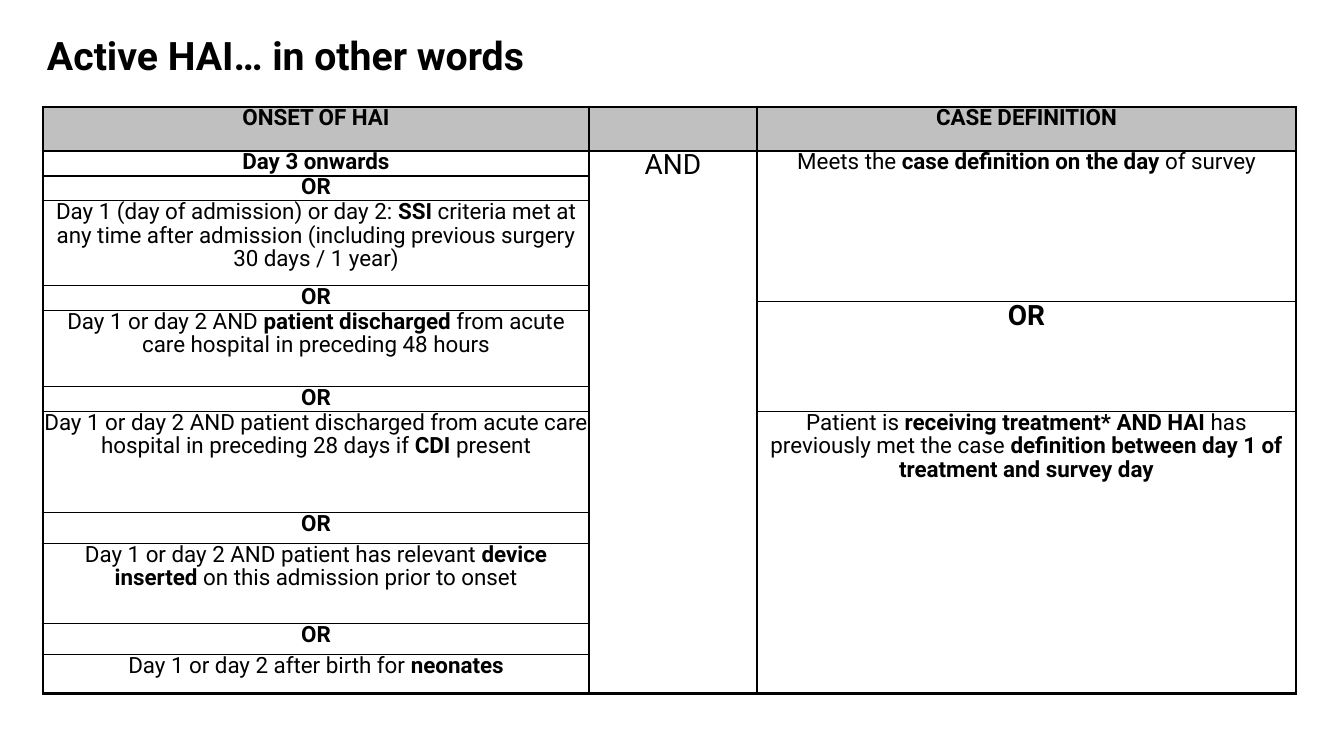
import pptx
import pptx.util
import pptx.dml.color
import pptx.enum.text
import pptx.oxml.ns
import lxml.etree

THEME = {
    "font": "Roboto", "ink": "000000", "header": "C0C0C0", "paper": "FFFFFF",
    "title": 28, "large": 20, "body": 16, "filler": 1,
    "outer": 2.25, "inner": 1,
}
SCALE = 914400 / 100.8


def px(n):
    return pptx.util.Emu(round(n * SCALE))


def add_runs(p, text, size):
    p.line_spacing = 0.9
    for i, part in enumerate(text.split("|")):
        if part:
            r = p.add_run()
            r.text = part
            r.font.name = THEME["font"]
            r.font.size = pptx.util.Pt(size)
            r.font.bold = i % 2 == 1
            r.font.color.rgb = pptx.dml.color.RGBColor.from_string(THEME["ink"])


prs = pptx.Presentation()
prs.slide_width, prs.slide_height = px(1344), px(756)
s = prs.slides.add_slide(prs.slide_layouts[5])

title = s.shapes.title
title.left, title.top, title.width, title.height = px(47), px(37), px(1137), px(88)
tf = title.text_frame
tf.margin_left = tf.margin_top = tf.margin_right = tf.margin_bottom = 0
tf.word_wrap = True
tf.auto_size = pptx.enum.text.MSO_AUTO_SIZE.NONE
tf.vertical_anchor = pptx.enum.text.MSO_ANCHOR.TOP
p = tf.paragraphs[0]
p.alignment = pptx.enum.text.PP_ALIGN.LEFT
add_runs(p, "|Active HAI… in other words|", THEME["title"])

widths = [546, 168, 539]
heights = [44, 25, 25, 85, 16, 9, 76, 25, 101, 31, 80, 31, 39]
entries = [
    (0, 0, 1, "body", "|ONSET OF HAI|"),
    (0, 1, 1, "body", ""),
    (0, 2, 1, "body", "|CASE DEFINITION|"),
    (1, 0, 1, "body", "|Day 3 onwards|"),
    (2, 0, 1, "body", "|OR|"),
    (3, 0, 1, "body", "Day 1 (day of admission) or day 2: |SSI |criteria met at any time after "
                      "admission (including previous surgery 30 days / 1 year)"),
    (4, 0, 2, "body", "|OR|"),
    (6, 0, 1, "body", "Day 1 or day 2 AND |patient discharged| from acute care hospital "
                      "in preceding 48 hours"),
    (7, 0, 1, "body", "|OR|"),
    (8, 0, 1, "body", "Day 1 or day 2 AND patient discharged from acute care hospital "
                      "in preceding 28 days if |CDI |present"),
    (9, 0, 1, "body", "|OR|"),
    (10, 0, 1, "body", "Day 1 or day 2 AND patient has relevant |device inserted| "
                       "on this admission prior to onset"),
    (11, 0, 1, "body", "|OR|"),
    (12, 0, 1, "body", "Day 1 or day 2 after birth for |neonates|"),
    (1, 1, 12, "large", "AND"),
    (1, 2, 4, "body", "Meets the |case definition on the day| of survey"),
    (5, 2, 3, "large", "|OR|"),
    (8, 2, 5, "body", "Patient is |receiving treatment* AND HAI| has previously met the case "
                      "|definition between day 1 of treatment and survey day|"),
]

table = s.shapes.add_table(len(heights), len(widths), px(43), px(107),
                           px(sum(widths)), px(sum(heights))).table
table.first_row = table.horz_banding = False
for column, width in zip(table.columns, widths):
    column.width = px(width)
for row, height in zip(table.rows, heights):
    row.height = px(height)

qn = pptx.oxml.ns.qn
for top, col, span, size, text in entries:
    bottom = top + span - 1
    if span > 1:
        table.cell(top, col).merge(table.cell(bottom, col))
    edges = {"lnL": col == 0, "lnR": col == len(widths) - 1,
             "lnT": top == 0, "lnB": bottom == len(heights) - 1}
    for row in range(top, bottom + 1):
        cell = table.cell(row, col)
        cell.margin_left = cell.margin_top = cell.margin_right = cell.margin_bottom = 0
        cell.vertical_anchor = pptx.enum.text.MSO_ANCHOR.TOP
        tcPr = cell._tc.get_or_add_tcPr()
        for edge, is_outer in edges.items():
            if row > top and (edge == "lnT" or edge == "lnB" and row < bottom):
                continue
            weight = THEME["outer" if is_outer else "inner"]
            ln = lxml.etree.SubElement(tcPr, qn("a:" + edge), w=str(pptx.util.Pt(weight)))
            fill = lxml.etree.SubElement(ln, qn("a:solidFill"))
            lxml.etree.SubElement(fill, qn("a:srgbClr"), val=THEME["ink"])
        cell.fill.solid()
        cell.fill.fore_color.rgb = pptx.dml.color.RGBColor.from_string(
            THEME["header" if row == 0 else "paper"])
        p = cell.text_frame.paragraphs[0]
        if row == top and text:
            p.alignment = pptx.enum.text.PP_ALIGN.CENTER
            add_runs(p, text, THEME[size])
        else:
            lxml.etree.SubElement(p._p, qn("a:endParaRPr"), sz=str(THEME["filler"] * 100))

prs.save("out.pptx")
